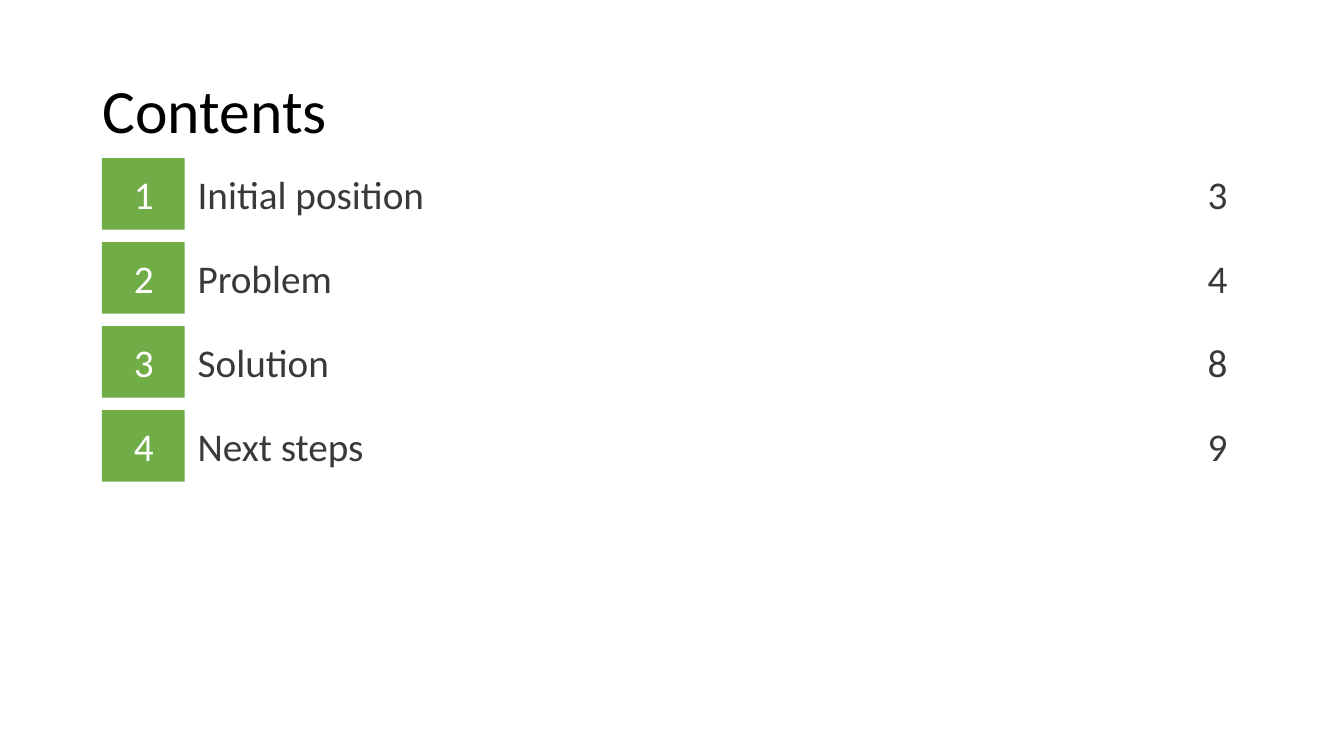
from dataclasses import dataclass

from pptx import Presentation
from pptx.dml.color import RGBColor
from pptx.enum.shapes import MSO_SHAPE
from pptx.enum.text import MSO_ANCHOR, MSO_AUTO_SIZE, PP_ALIGN
from pptx.util import Inches, Pt

LEFT, CENTER = PP_ALIGN.LEFT, PP_ALIGN.CENTER
MIDDLE = MSO_ANCHOR.MIDDLE
NO_AUTOFIT = MSO_AUTO_SIZE.NONE
RECTANGLE = MSO_SHAPE.RECTANGLE

SLIDE_WIDTH, SLIDE_HEIGHT = Inches(13.33), Inches(7.5)
TITLE_ONLY = 5
FONT = "Calibri"
GREEN, WHITE, GRAY, BLACK = "70AD47", "FFFFFF", "3B3838", "000000"

FIRST_ROW_TOP = 20.93
ROW_HEIGHT = 9.47
ROW_PITCH = 100 / 9


@dataclass(frozen=True)
class Column:
    left: float
    width: float
    align: PP_ALIGN
    color: str
    left_inset: float
    right_inset: float
    fill: str = ""


@dataclass(frozen=True)
class Chapter:
    heading: str
    page: int


NUMBER = Column(7.58, 6.17, CENTER, WHITE, 0.05, 0.04, GREEN)
HEADING = Column(14.33, 72.6, LEFT, GRAY, 0.05, 0.1)
PAGE = Column(88, 5.18, CENTER, GRAY, 0.1, 0.1)

CHAPTERS = [
    Chapter("Initial position", 3),
    Chapter("Problem", 4),
    Chapter("Solution", 8),
    Chapter("Next steps", 9),
]


def rgb(color: str) -> RGBColor:
    return RGBColor.from_string(color)


def area(left: float, top: float, width: float, height: float) -> tuple[int, ...]:
    return (
        round(SLIDE_WIDTH * left / 100),
        round(SLIDE_HEIGHT * top / 100),
        round(SLIDE_WIDTH * width / 100),
        round(SLIDE_HEIGHT * height / 100),
    )


def write(frame, text: str, size: int, color: str, align: PP_ALIGN) -> None:
    frame.text = text
    frame.word_wrap = True
    frame.auto_size = NO_AUTOFIT
    frame.vertical_anchor = MIDDLE
    paragraph = frame.paragraphs[0]
    paragraph.alignment = align
    paragraph.font.name = FONT
    paragraph.font.size = Pt(size)
    paragraph.font.color.rgb = rgb(color)


def add_title(slide, text: str) -> None:
    title = slide.shapes.title
    title.left, title.top, title.width, title.height = area(6.88, 5.33, 86.25, 19.33)
    write(title.text_frame, text, 44, BLACK, LEFT)
    title.text_frame.paragraphs[0].line_spacing = 0.9


def add_cell(slide, column: Column, top: float, text: str) -> None:
    place = area(column.left, top, column.width, ROW_HEIGHT)
    if column.fill:
        cell = slide.shapes.add_shape(RECTANGLE, *place)
        cell.shadow.inherit = False
        cell.fill.solid()
        cell.fill.fore_color.rgb = rgb(column.fill)
        cell.line.fill.background()
    else:
        cell = slide.shapes.add_textbox(*place)
    frame = cell.text_frame
    frame.margin_left = Inches(column.left_inset)
    frame.margin_right = Inches(column.right_inset)
    write(frame, text, 28, column.color, column.align)


def add_chapter(slide, number: int, chapter: Chapter) -> None:
    top = FIRST_ROW_TOP + (number - 1) * ROW_PITCH
    add_cell(slide, NUMBER, top, str(number))
    add_cell(slide, HEADING, top, chapter.heading)
    add_cell(slide, PAGE, top, str(chapter.page))


def main() -> None:
    presentation = Presentation()
    presentation.slide_width = SLIDE_WIDTH
    presentation.slide_height = SLIDE_HEIGHT
    slide = presentation.slides.add_slide(presentation.slide_layouts[TITLE_ONLY])
    add_title(slide, "Contents")
    for number, chapter in enumerate(CHAPTERS, start=1):
        add_chapter(slide, number, chapter)
    presentation.save("out.pptx")


if __name__ == "__main__":
    main()
